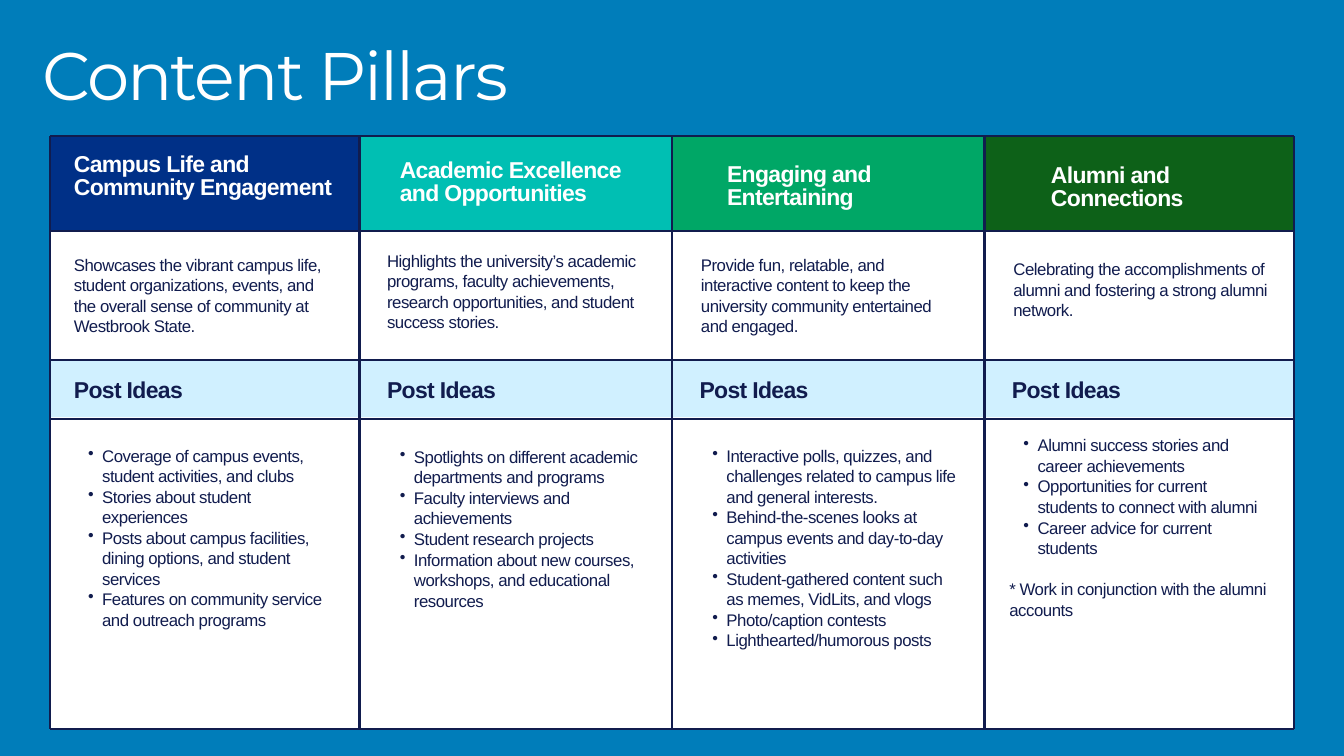
import pptx
import pptx.dml.color
import pptx.enum.shapes
import pptx.enum.text
import pptx.oxml.ns
import pptx.util
from dataclasses import dataclass
from lxml import etree

Inches = pptx.util.Inches
qn = pptx.oxml.ns.qn


@dataclass(frozen=True)
class TextStyle:
    font: str
    size: float
    leading: float
    spacing: int  # hundredths of a point
    bold: bool = False


@dataclass(frozen=True)
class Theme:
    background: str = "007DBA"
    white: str = "FFFFFF"
    navy: str = "111C4E"
    band: str = "D0F0FF"
    rule_width: float = 2.25
    title: TextStyle = TextStyle("Montserrat", 72, 72, -210)
    heading: TextStyle = TextStyle("Arial", 24.6, 24.6, -70, True)
    body: TextStyle = TextStyle("Arial", 18, 22, -50)


@dataclass(frozen=True)
class Pillar:
    color: str
    heading: str
    heading_box: tuple  # left, top, width
    summary: str
    summary_box: tuple
    label_left: float
    ideas: tuple
    ideas_box: tuple
    note: str = ""


class SlideBuilder:
    def __init__(self, slide, theme):
        self.slide = slide
        self.theme = theme
        fill = slide.background.fill
        fill.solid()
        fill.fore_color.rgb = self.color(theme.background)

    @staticmethod
    def color(value):
        return pptx.dml.color.RGBColor.from_string(value)

    def rectangle(self, left, top, width, height, color):
        shape = self.slide.shapes.add_shape(
            pptx.enum.shapes.MSO_SHAPE.RECTANGLE,
            Inches(left), Inches(top), Inches(width), Inches(height))
        shape.shadow.inherit = False
        shape.fill.solid()
        shape.fill.fore_color.rgb = self.color(color)
        shape.line.fill.background()

    def rule(self, x1, y1, x2, y2):
        connector = self.slide.shapes.add_connector(
            pptx.enum.shapes.MSO_CONNECTOR.STRAIGHT,
            Inches(x1), Inches(y1), Inches(x2), Inches(y2))
        connector.line.color.rgb = self.color(self.theme.navy)
        connector.line.width = pptx.util.Pt(self.theme.rule_width)
        etree.SubElement(connector._element.spPr, qn("a:effectLst"))

    def text(self, left, top, width, height, lines, style, color, bullets=False):
        box = self.slide.shapes.add_textbox(
            Inches(left), Inches(top), Inches(width), Inches(height))
        frame = box.text_frame
        frame.word_wrap = True
        frame.auto_size = pptx.enum.text.MSO_AUTO_SIZE.SHAPE_TO_FIT_TEXT
        frame.margin_left = frame.margin_top = 0
        frame.margin_right = frame.margin_bottom = 0
        for index, line in enumerate(lines):
            paragraph = frame.paragraphs[0] if index == 0 else frame.add_paragraph()
            self.set_line(paragraph, line, style, color)
            if bullets:
                self.bullet(paragraph)
        return frame

    def set_line(self, paragraph, line, style, color):
        run = paragraph.add_run()
        run.text = line
        run._r.get_or_add_rPr().set("spc", str(style.spacing))
        paragraph.line_spacing = pptx.util.Pt(style.leading)
        font = paragraph.font
        font.name = style.font
        font.size = pptx.util.Pt(style.size)
        font.bold = style.bold
        font.color.rgb = self.color(color)

    def bullet(self, paragraph):
        properties = paragraph._p.get_or_add_pPr()
        properties.set("marL", str(Inches(0.42)))
        properties.set("indent", str(Inches(-0.21)))
        mark = etree.Element(qn("a:buChar"), char="•")
        properties.find(qn("a:defRPr")).addprevious(mark)


PILLARS = (
    Pillar("003087", "Campus Life and Community Engagement", (1.1, 2.3, 3.88),
           "Showcases the vibrant campus life, student organizations, events, "
           "and the overall sense of community at Westbrook State.",
           (1.1, 3.78, 3.83), 1.1,
           ("Coverage of campus events, student activities, and clubs",
            "Stories about student experiences",
            "Posts about campus facilities, dining options, and student services",
            "Features on community service and outreach programs"),
           (1.1, 6.62, 3.83)),
    Pillar("00BFB3", "Academic Excellence and Opportunities", (5.95, 2.38, 3.3),
           "Highlights the university’s academic programs, faculty achievements, "
           "research opportunities, and student success stories.",
           (5.76, 3.72, 3.85), 5.76,
           ("Spotlights on different academic departments and programs",
            "Faculty interviews and achievements",
            "Student research projects",
            "Information about new courses, workshops, and educational resources"),
           (5.74, 6.64, 3.83)),
    Pillar("00A766", "Engaging and Entertaining", (10.82, 2.45, 2.53),
           "Provide fun, relatable, and interactive content to keep the "
           "university community entertained and engaged.",
           (10.43, 3.78, 3.85), 10.41,
           ("Interactive polls, quizzes, and challenges related to campus life "
            "and general interests.",
            "Behind-the-scenes looks at campus events and day-to-day activities",
            "Student-gathered content such as memes, VidLits, and vlogs",
            "Photo/caption contests",
            "Lighthearted/humorous posts"),
           (10.39, 6.62, 3.83)),
    Pillar("0D6118", "Alumni and Connections", (15.64, 2.46, 2.27),
           "Celebrating the accomplishments of alumni and fostering a strong "
           "alumni network.",
           (15.08, 3.85, 3.85), 15.06,
           ("Alumni success stories and career achievements",
            "Opportunities for current students to connect with alumni",
            "Career advice for current students"),
           (15.02, 6.47, 3.83),
           "* Work in conjunction with the alumni accounts"),
)

LEFT, RIGHT, TOP, BOTTOM = 0.74, 19.26, 2.02, 10.85
COLUMN = (RIGHT - LEFT) / len(PILLARS)


def main():
    presentation = pptx.Presentation()
    presentation.slide_width = Inches(20)
    presentation.slide_height = Inches(11.25)
    theme = Theme()
    slide = presentation.slides.add_slide(presentation.slide_layouts[6])
    builder = SlideBuilder(slide, theme)

    # Title
    builder.text(0.63, 0.69, 13.57, 1.03, ["Content Pillars"], theme.title, theme.white)

    # Panel, column headers and label band
    builder.rectangle(LEFT, 3.36, RIGHT - LEFT, 7.49, theme.white)
    for index, pillar in enumerate(PILLARS):
        builder.rectangle(LEFT + index * COLUMN, 2.04, COLUMN, 1.39, pillar.color)
    builder.rectangle(LEFT, 5.35, RIGHT - LEFT, 0.86, theme.band)

    # Grid rules
    for x in (LEFT, 5.35, 10, 14.65, RIGHT):
        builder.rule(x, BOTTOM, x, TOP)
    for y in (TOP, 3.44, 5.36, 6.23, BOTTOM):
        builder.rule(RIGHT, y, LEFT, y)

    # Column text
    for pillar in PILLARS:
        builder.text(*pillar.heading_box, 0.7, [pillar.heading], theme.heading, theme.white)
        builder.text(*pillar.summary_box, 1.2, [pillar.summary], theme.body, theme.navy)
        builder.text(pillar.label_left, 5.66, 2.53, 0.35, ["Post Ideas"],
                     theme.heading, theme.navy)
        ideas = builder.text(*pillar.ideas_box, 2.76, pillar.ideas,
                             theme.body, theme.navy, bullets=True)
        if pillar.note:
            paragraph = ideas.add_paragraph()
            builder.set_line(paragraph, pillar.note, theme.body, theme.navy)
            paragraph.space_before = pptx.util.Pt(theme.body.leading)

    presentation.save("out.pptx")


if __name__ == "__main__":
    main()
